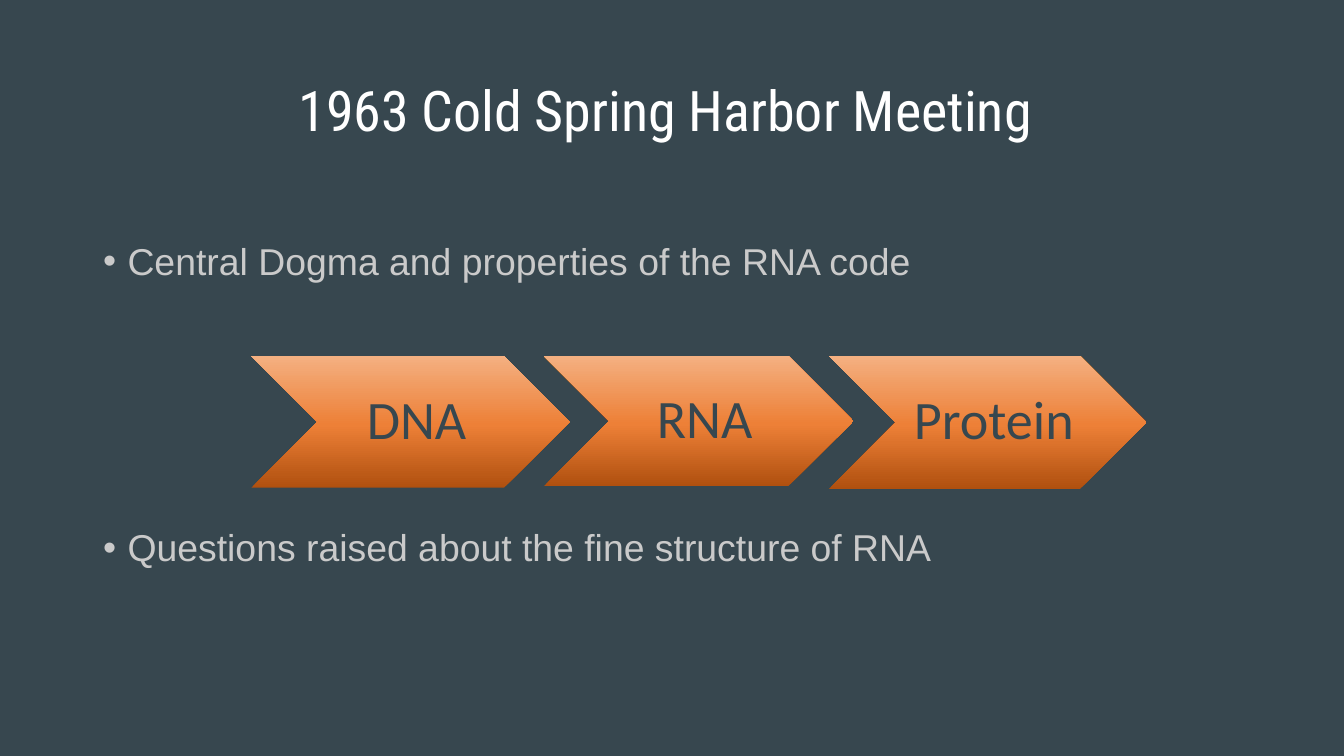
from copy import deepcopy

from pptx import Presentation
from pptx.dml.color import RGBColor
from pptx.enum.shapes import MSO_SHAPE as Shape
from pptx.enum.text import MSO_ANCHOR as Anchor, MSO_AUTO_SIZE as Fit, PP_ALIGN as Align
from pptx.oxml.ns import qn
from pptx.util import Cm, Pt

SLATE = RGBColor(0x37, 0x47, 0x4F)
WHITE = RGBColor(0xFF, 0xFF, 0xFF)
GREY = RGBColor(0xCA, 0xCA, 0xCA)
RUST = RGBColor(0xB0, 0x50, 0x0F)
ORANGE = RGBColor(0xED, 0x80, 0x37)
PEACH = RGBColor(0xF4, 0xB0, 0x81)


def write(par, text, font, size, color, align=Align.CENTER, before=0):
    par.alignment = align
    par.line_spacing = 0.9
    par.space_before = Pt(before)
    run = par.add_run()
    run.text = text
    run.font.name = font
    run.font.size = Pt(size)
    run.font.color.rgb = color


def frame(shape, anchor, left=0.18, top=0.1, right=0.18):
    """Set anchor and insets (in cm) and return the text frame."""
    box = shape.text_frame
    box.word_wrap = True
    box.auto_size = Fit.NONE
    box.vertical_anchor = anchor
    box.margin_left, box.margin_right = Cm(left), Cm(right)
    box.margin_top, box.margin_bottom = Cm(top), Cm(0.1)
    return box


deck = Presentation()
deck.slide_width, deck.slide_height = Cm(25.4), Cm(14.29)
slide = deck.slides.add_slide(deck.slide_layouts[1])
slide.background.fill.solid()
slide.background.fill.fore_color.rgb = SLATE

# Title and list
title, body = slide.placeholders
for holder, top, height in ((title, 0.76, 2.77), (body, 3.45, 9.07)):
    holder.left, holder.top = Cm(1.75), Cm(top)
    holder.width, holder.height = Cm(21.9), Cm(height)

box = frame(title, Anchor.MIDDLE)
write(box.paragraphs[0], "1963 Cold Spring Harbor Meeting ", "Roboto Condensed", 30, WHITE)

# The space before the second point leaves room for the chevrons
box = frame(body, Anchor.TOP, top=1.14)
points = (
    ("Central Dogma and properties of the RNA code", 0),
    ("Questions raised about the fine structure of RNA", 132),
)
for i, (text, gap) in enumerate(points):
    par = box.add_paragraph() if i else box.paragraphs[0]
    write(par, text, "Arial", 20, GREY, align=Align.LEFT, before=gap)
    props = par._p.get_or_add_pPr()
    props.set("marL", str(Cm(0.48)))
    props.set("indent", str(Cm(-0.46)))
    props.append(props.makeelement(qn("a:buChar"), {"char": "•"}))

# Flow from DNA to protein
steps = (("DNA", 4.75, 6.02, 2.49), ("RNA", 10.28, 5.85, 2.46), ("Protein", 15.67, 6, 2.51))
for name, left, width, height in steps:
    step = slide.shapes.add_shape(Shape.CHEVRON, Cm(left), Cm(6.73), Cm(width), Cm(height))
    step.shadow.inherit = False
    step.line.fill.background()
    step.fill.gradient()
    step.fill.gradient_angle = 90
    first = step._element.spPr.find(".//" + qn("a:gs"))
    first.addnext(deepcopy(first))
    for stop, place, color in zip(step.fill.gradient_stops, (0, 0.48, 1), (RUST, ORANGE, PEACH)):
        stop.position = place
        stop.color.rgb = color
    box = frame(step, Anchor.MIDDLE, left=0.33, right=0.1)
    write(box.paragraphs[0], name, "Calibri", 29, SLATE)

deck.save("out.pptx")
